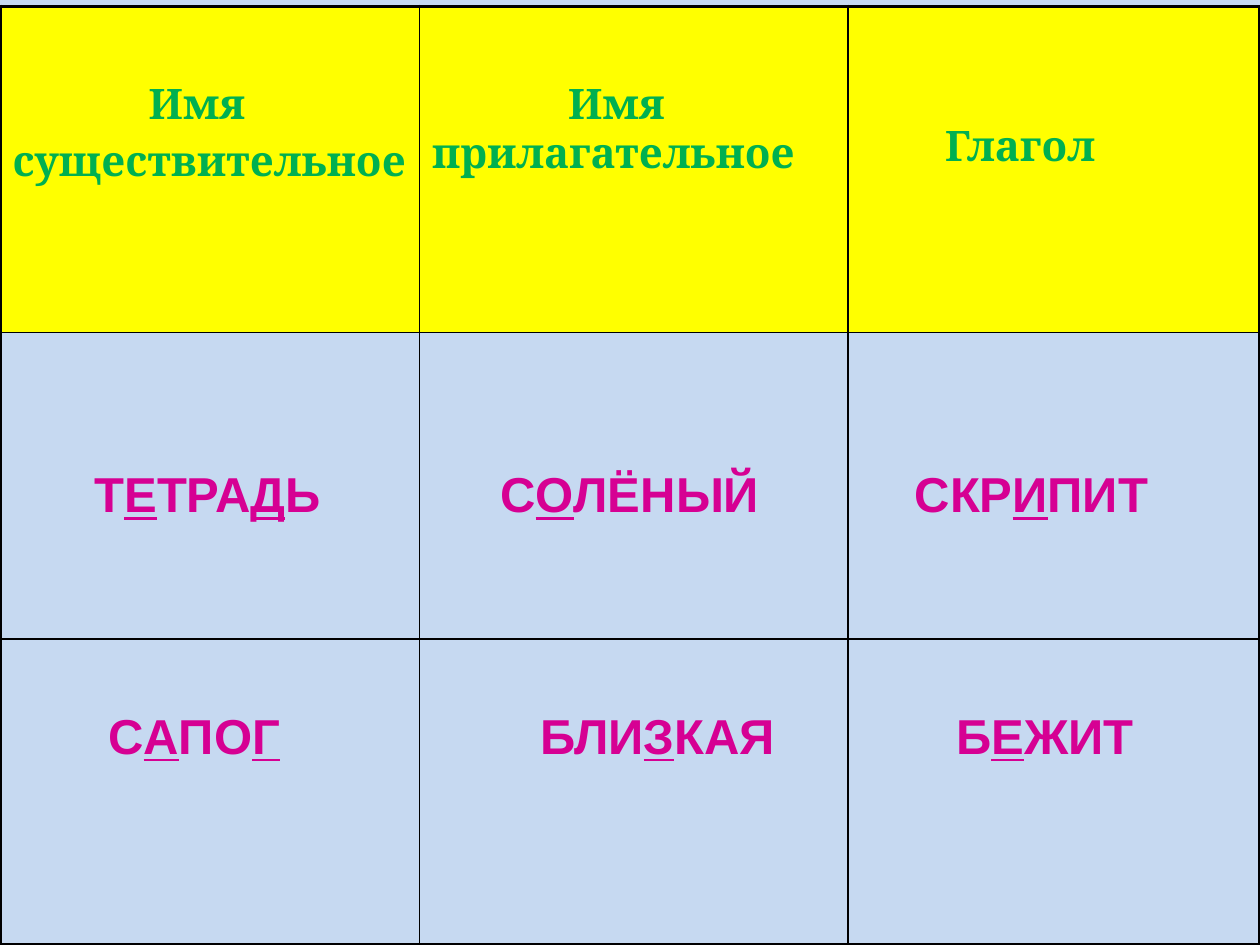
"""Build a slide with a table of words sorted by part of speech."""
import pptx
import pptx.dml.color
import pptx.oxml
import pptx.oxml.ns
import pptx.util

Inches = pptx.util.Inches
Pt = pptx.util.Pt

COLORS = {"background": "C6D9F1", "header": "FFFF00", "title": "00B050", "word": "D60093", "border": "000000"}
HEADER_FORMAT = {"name": "Cambria", "size": Pt(24), "bold": True}
WORD_FORMAT = {"name": "Arial", "size": Pt(28), "bold": True}
COLUMN_WIDTHS = [3.33, 3.4, 3.27]
ROW_HEIGHTS = [2.59, 2.43, 2.43]
THICK, THIN = 2.25, 1

# Each cell: top margin, space before later lines, lines of (indent, text); underlined letters stand between underscores.
ROWS = [
    [
        (0.6, 4.8, [(1.08, "Имя"), (0, "существительное")]),
        (0.6, 0, [(1.08, "Имя"), (0, "прилагательное")]),
        (0.93, 0, [(0.67, "Глагол")]),
    ],
    [
        (1.08, 0, [(0.65, "Т_Е_ТРА_Д_Ь")]),
        (1.08, 0, [(0.54, "С_О_ЛЁНЫЙ")]),
        (1.08, 0, [(0.43, "СКР_И_ПИТ")]),
    ],
    [
        (0.57, 0, [(0.76, "С_А_ПО_Г_")]),
        (0.57, 0, [(0.86, "БЛИ_З_КАЯ")]),
        (0.57, 0, [(0.76, "Б_Е_ЖИТ")]),
    ],
]


def color(name):
    return pptx.dml.color.RGBColor.from_string(COLORS[name])


def add_borders(cell, widths):
    properties = cell._tc.get_or_add_tcPr()
    for side, width in widths.items():
        properties.append(pptx.oxml.parse_xml(
            f'<a:ln{side} {pptx.oxml.ns.nsdecls("a")} w="{Pt(width)}"><a:solidFill>'
            f'<a:srgbClr val="{COLORS["border"]}"/></a:solidFill></a:ln{side}>'))


def write_line(paragraph, indent, text, formats, color_name):
    properties = paragraph._p.get_or_add_pPr()
    properties.set("marL", str(Inches(indent)))
    properties.set("indent", "0")
    for position, part in enumerate(text.split("_")):
        if part:
            run = paragraph.add_run()
            run.text = part
            for attribute, value in formats.items():
                setattr(run.font, attribute, value)
            run.font.underline = position % 2 == 1
            run.font.color.rgb = color(color_name)


def fill_cell(cell, content, is_header):
    top, space, lines = content
    margins = {"margin_left": 0.1, "margin_right": 0.05, "margin_top": top, "margin_bottom": 0.05}
    for attribute, value in margins.items():
        setattr(cell, attribute, Inches(value))
    for number, (indent, text) in enumerate(lines):
        paragraph = cell.text_frame.add_paragraph() if number else cell.text_frame.paragraphs[0]
        paragraph.space_before = Pt(space if number else 0)
        if is_header:
            write_line(paragraph, indent, text, HEADER_FORMAT, "title")
        else:
            write_line(paragraph, indent, text, WORD_FORMAT, "word")
    if is_header:
        cell.fill.solid()
        cell.fill.fore_color.rgb = color("header")
    else:
        cell.fill.background()


def main():
    presentation = pptx.Presentation()
    presentation.slide_width, presentation.slide_height = Inches(10), Inches(7.5)
    slide = presentation.slides.add_slide(presentation.slide_layouts[6])
    slide.background.fill.solid()
    slide.background.fill.fore_color.rgb = color("background")

    last_row, last_column = len(ROW_HEIGHTS) - 1, len(COLUMN_WIDTHS) - 1
    table = slide.shapes.add_table(
        len(ROW_HEIGHTS), len(COLUMN_WIDTHS), 0, Inches(0.05),
        Inches(sum(COLUMN_WIDTHS)), Inches(sum(ROW_HEIGHTS))).table
    table.first_row = table.horz_banding = False
    for column, width in zip(table.columns, COLUMN_WIDTHS):
        column.width = Inches(width)
    for row, height in zip(table.rows, ROW_HEIGHTS):
        row.height = Inches(height)

    for row_index, contents in enumerate(ROWS):
        for column_index, content in enumerate(contents):
            cell = table.cell(row_index, column_index)
            outer = {"L": column_index == 0, "R": column_index == last_column,
                     "T": row_index == 0, "B": row_index == last_row}
            add_borders(cell, {side: THICK if edge else THIN for side, edge in outer.items()})
            fill_cell(cell, content, row_index == 0)

    presentation.save("out.pptx")


if __name__ == "__main__":
    main()
